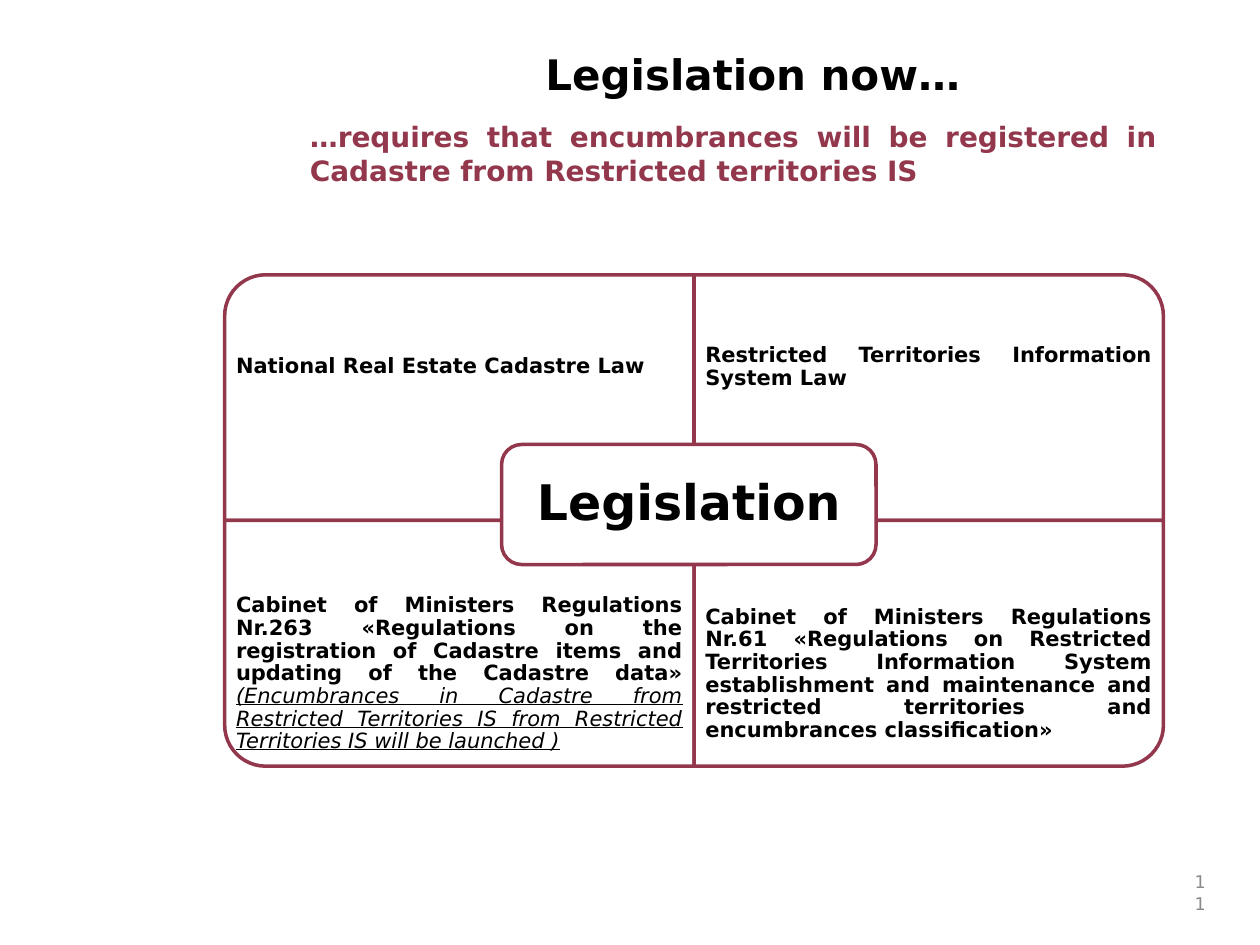
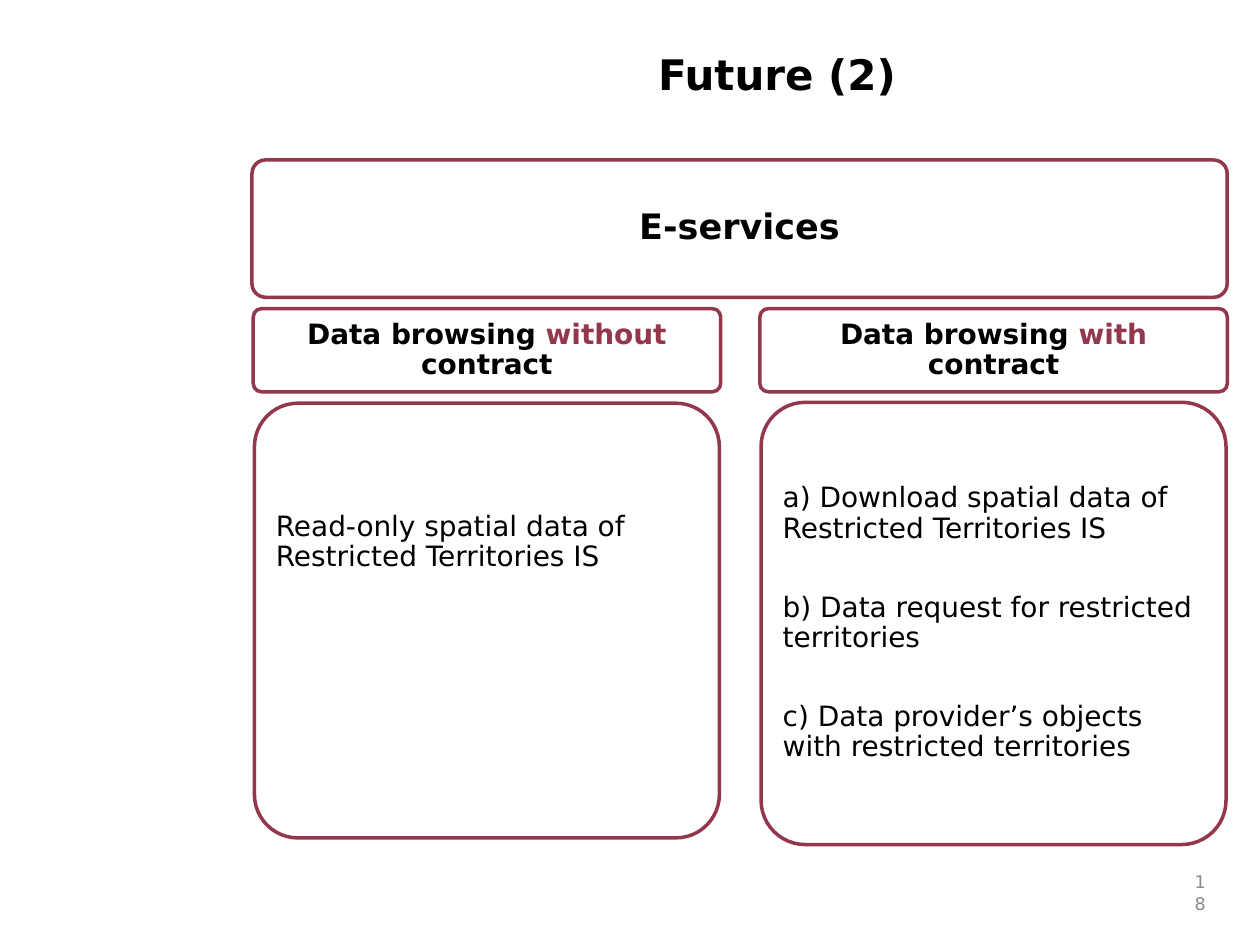
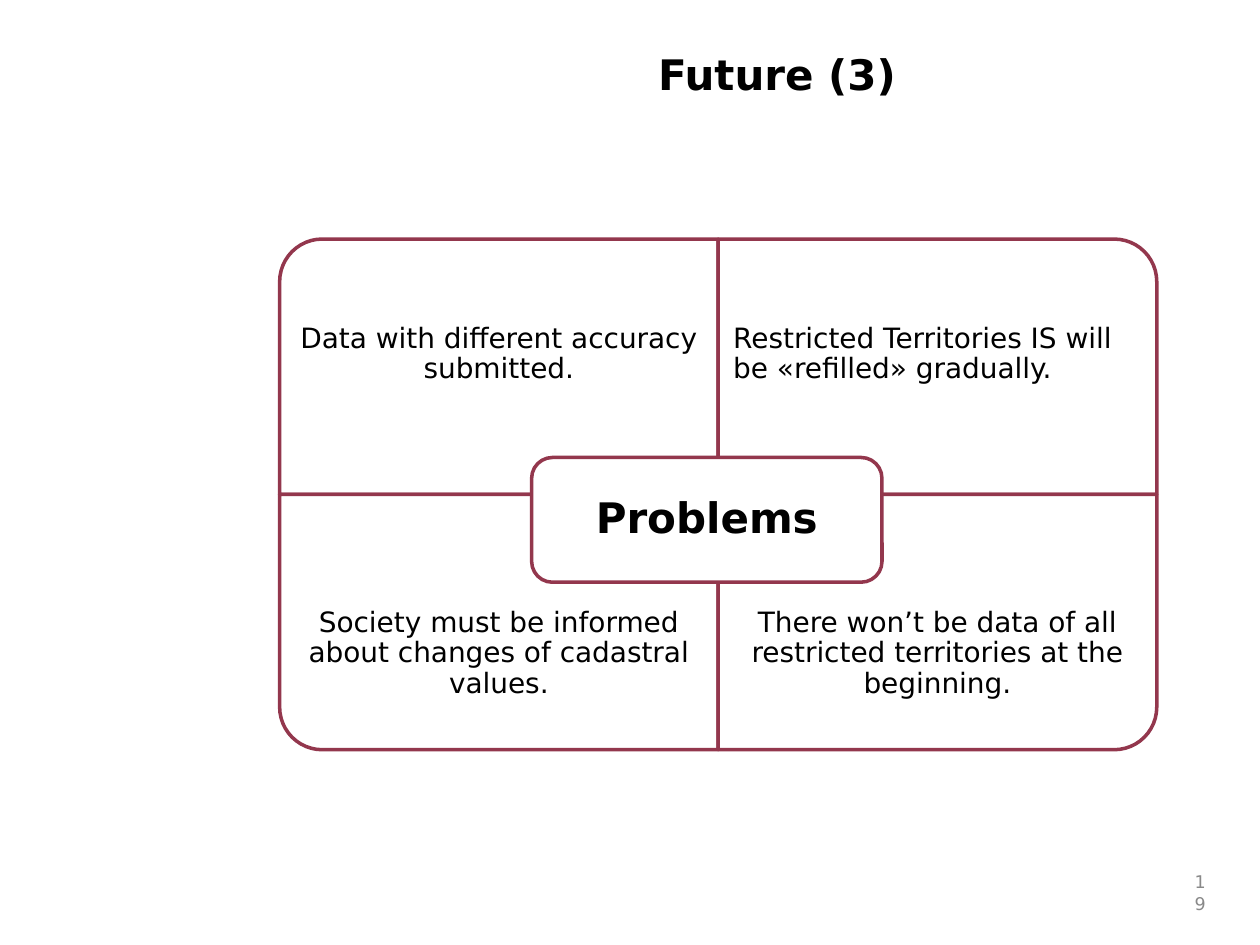
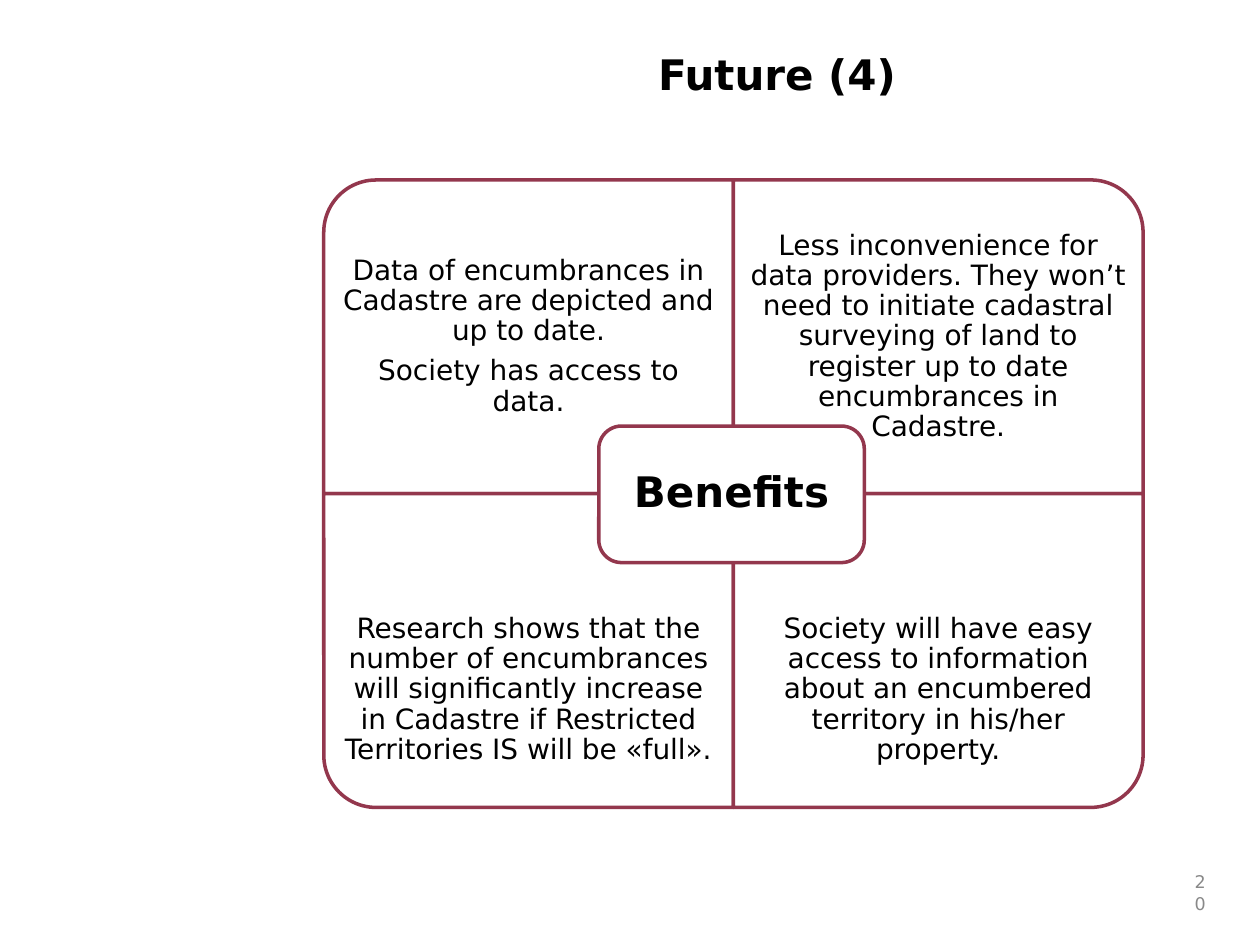
from pptx import Presentation
from pptx.dml.color import RGBColor
from pptx.enum.shapes import MSO_SHAPE as Preset
from pptx.enum.text import MSO_ANCHOR as Anchor, PP_ALIGN as Align
from pptx.util import Pt

WINE = RGBColor(0x93, 0x37, 0x4D)
BLACK = RGBColor(0, 0, 0)
WHITE = RGBColor(0xFF, 0xFF, 0xFF)
GREY = RGBColor(0x89, 0x89, 0x89)
FONT = "DejaVu Sans"
BODY_SIZE = 16
PADDING = (7.2, 3.6, 7.2, 3.6)
# Height of one body line with its spacing, used to shift centred text
LINE_SHIFT = 22.4


class Deck:
    """Holds the shared style and the current slide."""

    def __init__(self):
        self.deck = Presentation()
        self.deck.slide_width, self.deck.slide_height = Pt(720), Pt(540)
        self.page = None

    def add_page(self, title, number, left=204, width=480):
        self.page = self.deck.slides.add_slide(self.deck.slide_layouts[5])
        heading = self.page.shapes.title
        heading.left, heading.top = Pt(left), Pt(24)
        heading.width, heading.height = Pt(width), Pt(84)
        self.set_text(heading, [title], 24, bold=True, anchor=Anchor.TOP)
        self.add_text((672, 498, 24, 24), [str(number)], 10, color=GREY,
                      align=Align.RIGHT)

    def set_text(self, box, paragraphs, size=BODY_SIZE, bold=False, color=BLACK,
                 align=Align.CENTER, anchor=Anchor.MIDDLE, padding=PADDING,
                 line_spacing=None, before=0, after=0):
        """Each paragraph is a string or a list of (text, font changes)."""
        frame = box.text_frame
        frame.word_wrap = True
        frame.vertical_anchor = anchor
        (frame.margin_left, frame.margin_top,
         frame.margin_right, frame.margin_bottom) = map(Pt, padding)
        for index, content in enumerate(paragraphs):
            para = frame.add_paragraph() if index else frame.paragraphs[0]
            para.alignment = align
            para.space_before = Pt(before if index else 0)
            para.space_after = Pt(after)
            if line_spacing:
                para.line_spacing = line_spacing
            spans = [(content, {})] if isinstance(content, str) else content
            for words, changes in spans:
                span = para.add_run()
                span.text = words
                font = span.font
                font.name, font.size = FONT, Pt(size)
                font.color.rgb = changes.get("color", color)
                font.bold = changes.get("bold", bold)
                font.italic = changes.get("italic")
                font.underline = changes.get("underline")

    def add_text(self, area, paragraphs, size=BODY_SIZE, **style):
        box = self.page.shapes.add_textbox(*map(Pt, area))
        self.set_text(box, paragraphs, size, **style)

    def add_outline(self, preset, area):
        shape = self.page.shapes.add_shape(preset, *map(Pt, area))
        shape.shadow.inherit = False
        shape.fill.solid()
        shape.fill.fore_color.rgb = WHITE
        shape.line.color.rgb = WINE
        shape.line.width = Pt(2)
        return shape

    def add_card(self, area, paragraphs, size=BODY_SIZE, inset=5, below=0,
                 rounding=0.1, **style):
        """Rounded rectangle with its text; below lifts centred text."""
        shape = self.add_outline(Preset.ROUNDED_RECTANGLE, area)
        shape.adjustments[0] = rounding
        self.set_text(shape, paragraphs, size, line_spacing=0.9,
                      padding=(inset, inset, inset, inset + below),
                      after=0.35 * size, **style)

    def add_matrix(self, area, cells, center_area, center, center_size=24,
                   size=BODY_SIZE, inset=8.6, bold=False):
        """Four quadrants around a centre; a cell is text, lines down, align."""
        left, top, full_width, full_height = area
        width, height = full_width / 2, full_height / 2
        for index, (paragraphs, lines, align) in enumerate(cells):
            row, column = divmod(index, 2)
            x, y = left + column * width, top + row * height
            # The quarter-turned quadrants swap width and height
            rotation = (270, 0, 180, 90)[index]
            if rotation % 180:
                shift = (width - height) / 2
                place = (x + shift, y - shift, height, width)
            else:
                place = (x, y, width, height)
            quadrant = self.add_outline(Preset.ROUND_1_RECTANGLE, place)
            quadrant.rotation = rotation
            self.add_text((x, y + row * height / 4, width, height * 0.75),
                          paragraphs, size, bold=bold, align=align,
                          line_spacing=0.9, after=0.35 * size,
                          padding=(inset, inset + lines * LINE_SHIFT,
                                   inset, inset))
        self.add_card(center_area, [center], center_size, inset=7.2,
                      rounding=0.1667, bold=True)


def add_legislation(deck):
    deck.add_page("Legislation now…", 11, left=176.4, width=507.6)
    regulations = [
        ("Cabinet of Ministers Regulations Nr.263 «Regulations on the "
         "registration of Cadastre items and updating of the Cadastre data» ", {}),
        ("(Encumbrances in Cadastre from Restricted Territories IS from "
         "Restricted Territories IS will be launched )",
         {"bold": False, "italic": True, "underline": True}),
    ]
    cells = [
        (["National Real Estate Cadastre Law"], 0, Align.JUSTIFY),
        (["Restricted Territories Information System Law"], 0, Align.JUSTIFY),
        ([regulations], 0, Align.JUSTIFY),
        (["Cabinet of Ministers Regulations Nr.61 «Regulations on Restricted "
          "Territories Information System establishment and maintenance and "
          "restricted territories and encumbrances classification»"],
         0, Align.JUSTIFY),
    ]
    deck.add_matrix((128.4, 157, 536.4, 280.8), cells, (286.6, 254, 214, 68.6),
                    "Legislation", 28, size=12, inset=6.5, bold=True)
    deck.add_text((170, 64.8, 498.2, 57),
                  ["…requires that encumbrances will be registered in Cadastre "
                   "from Restricted territories IS"],
                  color=WINE, bold=True, align=Align.JUSTIFY, anchor=Anchor.TOP)


def add_services(deck):
    deck.add_page("Future (2)", 18)
    deck.add_card((144, 91.4, 557.3, 78.5), ["E-services"], 20, bold=True)
    # One column per kind of access: text, top, height, space below the text
    columns = [
        ("without", ["Read-only spatial data of Restricted Territories IS"],
         230.4, 248.4, 4 * LINE_SHIFT),
        ("with", ["a) Download spatial data of Restricted Territories IS",
                  "b) Data request for restricted territories",
                  "c) Data provider’s objects with restricted territories"],
         229.9, 252.7, 0),
    ]
    for index, (access, items, top, height, below) in enumerate(columns):
        left = 144.7 + index * 289.5
        heading = [("Data browsing ", {}), (access, {"color": WINE}),
                   (" contract", {})]
        deck.add_card((left, 176.4, 267.1, 47.5), [heading], bold=True)
        deck.add_card((left + 0.7, top, 265.7, height), items, below=below,
                      before=LINE_SHIFT, align=Align.LEFT)


def add_problems(deck):
    deck.add_page("Future (3)", 19)
    cells = [
        (["Data with different accuracy submitted."], 1, Align.CENTER),
        (["Restricted Territories IS will be «refilled» gradually."],
         1, Align.LEFT),
        (["Society must be informed about changes of cadastral values."],
         0, Align.CENTER),
        (["There won’t be data of all restricted territories at the "
          "beginning."], 0, Align.CENTER),
    ]
    deck.add_matrix((159.8, 136.6, 501.2, 291.8), cells,
                    (303.8, 261.4, 200.2, 71.3), "Problems")


def add_benefits(deck):
    deck.add_page("Future (4)", 20)
    cells = [
        (["Data of encumbrances in Cadastre are depicted and up to date.",
          "Society has access to data."], 2, Align.CENTER),
        (["Less inconvenience for data providers. They won’t need to initiate "
          "cadastral surveying of land to register up to date encumbrances in "
          "Cadastre."], 2, Align.CENTER),
        (["Research shows that the number of encumbrances will significantly "
          "increase in Cadastre if Restricted Territories IS will be «full»."],
         0, Align.CENTER),
        (["Society will have easy access to information about an encumbered "
          "territory in his/her property."], 0, Align.CENTER),
    ]
    deck.add_matrix((185, 102.8, 468.2, 358.6), cells,
                    (342.2, 243.5, 151.7, 78), "Benefits")


def main():
    deck = Deck()
    for add_slide in (add_legislation, add_services, add_problems, add_benefits):
        add_slide(deck)
    deck.deck.save("out.pptx")


if __name__ == "__main__":
    main()
